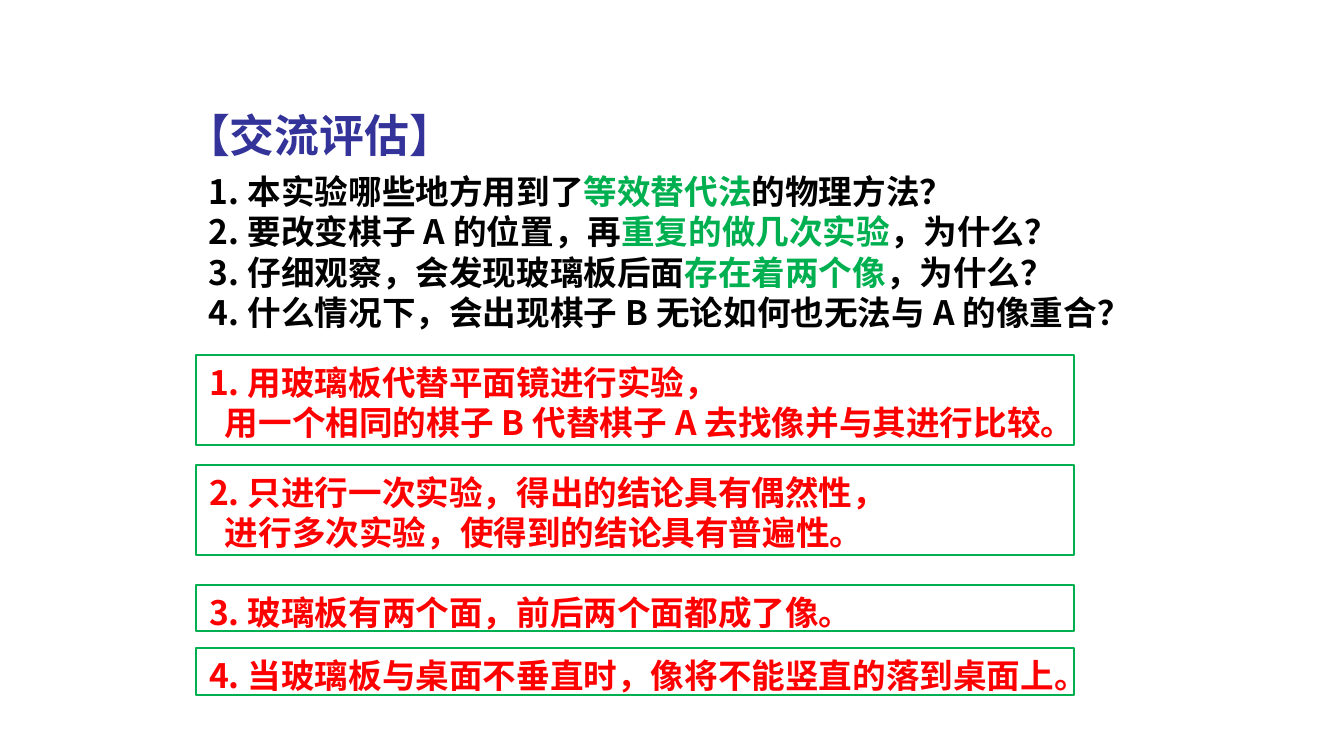
"""Build the slide with four experiment questions and their boxed answers."""
from pptx import Presentation
from pptx.dml.color import RGBColor
from pptx.enum.shapes import MSO_SHAPE as Shape
from pptx.enum.text import MSO_ANCHOR as Anchor, PP_ALIGN as Align
from pptx.util import Emu, Pt

PX = 914400 / 134.4
FONT = "Noto Sans CJK SC"
BLUE, BLACK, GREEN, RED = "333399", "000000", "00B050", "FF0000"


def px(count):
    """Turn pixels into EMU."""
    return Emu(round(count * PX))


def write(box, lines, size=18, color=BLACK, accent=GREEN, wrap=True, indent=0):
    """Fill a box with lines of spans; odd spans take the accent colour."""
    frame = box.text_frame
    frame.word_wrap = wrap
    frame.vertical_anchor = Anchor.TOP
    frame.margin_left, frame.margin_top = px(13), px(7)
    frame.margin_right = frame.margin_bottom = 0
    for row, spans in enumerate(lines):
        para = frame.add_paragraph() if row else frame.paragraphs[0]
        para.alignment = Align.LEFT
        para.line_spacing = Pt(size * 1.2)
        if row and indent:
            para._p.get_or_add_pPr().set("marL", str(px(indent)))
        for index, text in enumerate(spans):
            span = para.add_run()
            span.text = text
            font = span.font
            font.size, font.bold, font.name = Pt(size), True, FONT
            font.color.rgb = RGBColor.from_string(accent if index % 2 else color)
            east_asian = font._element.makeelement(
                "{http://schemas.openxmlformats.org/drawingml/2006/main}ea", {"typeface": FONT})
            font._element.append(east_asian)


deck = Presentation()
deck.slide_width, deck.slide_height = px(1344), px(756)
page = deck.slides.add_slide(deck.slide_layouts[6])

title = page.shapes.add_textbox(px(172), px(101), px(382), px(54))
write(title, [["【交流评估】"]], size=24, color=BLUE, wrap=False)

questions = page.shapes.add_textbox(px(196), px(164), px(923), px(165))
write(questions, [
    ["1.本实验哪些地方用到了", "等效替代法", "的物理方法？"],
    ["2.要改变棋子A的位置，再", "重复的做几次实验", "，为什么？"],
    ["3.仔细观察，会发现玻璃板后面", "存在着两个像", "，为什么？"],
    ["4.什么情况下，会出现棋子B无论如何也无法与A的像重合？"],
], wrap=False)

answers = [
    (355, 90, ["1.用玻璃板代替平面镜进行实验，", "用一个相同的棋子B代替棋子A去找像并与其进行比较。"]),
    (465, 90, ["2.只进行一次实验，得出的结论具有偶然性，", "进行多次实验，使得到的结论具有普遍性。"]),
    (585, 46, ["3.玻璃板有两个面，前后两个面都成了像。"]),
    (648, 47, ["4.当玻璃板与桌面不垂直时，像将不能竖直的落到桌面上。"]),
]
for top, height, lines in answers:
    answer = page.shapes.add_shape(Shape.RECTANGLE, px(196), px(top), px(878), px(height))
    answer.shadow.inherit = False
    answer.fill.background()
    answer.line.color.rgb = RGBColor.from_string(GREEN)
    answer.line.width = Pt(0.75)
    write(answer, [[line] for line in lines], color=RED, indent=16)

deck.save("out.pptx")
